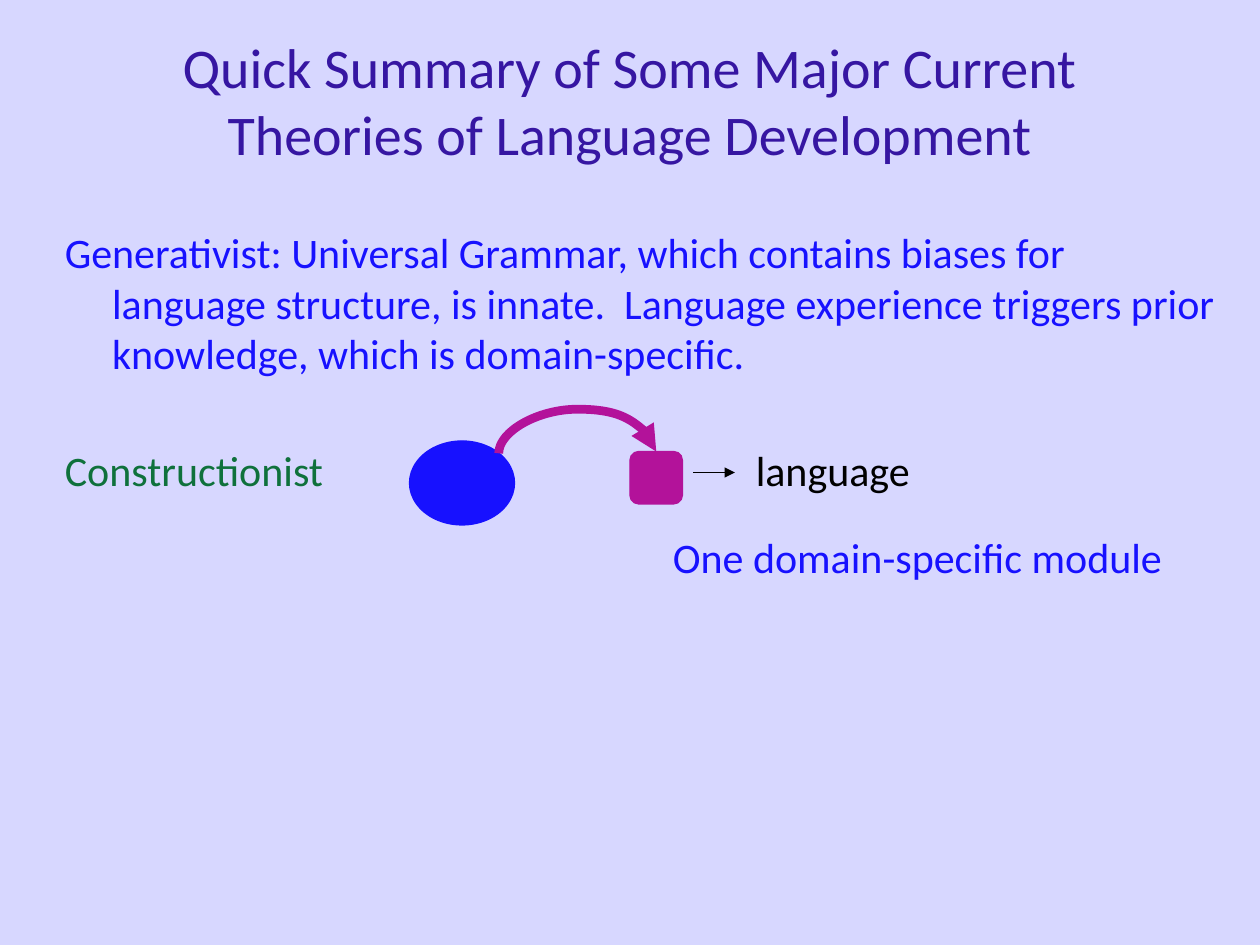
from dataclasses import dataclass

from lxml import etree
from pptx import Presentation
from pptx import util as u
from pptx.dml.color import RGBColor
from pptx.enum import shapes, text
from pptx.oxml.ns import qn


@dataclass(frozen=True)
class Theme:
    font: str = "Calibri"
    title_size: int = 32
    body_size: int = 24
    background: str = "D7D7FF"
    title: str = "3616A2"
    blue: str = "1711FF"
    green: str = "0F713C"
    magenta: str = "B3129A"
    black: str = "000000"
    thin: float = 0.75
    thick: float = 5


class Page:
    """Draws on one slide; lengths are cells of a 120 by 90 grid."""

    columns, rows = 120, 90

    def __init__(self, presentation, theme):
        self.theme = theme
        self.cell_width = presentation.slide_width / self.columns
        self.cell_height = presentation.slide_height / self.rows
        self.slide = presentation.slides.add_slide(presentation.slide_layouts[6])
        fill = self.slide.background.fill
        fill.solid()
        fill.fore_color.rgb = RGBColor.from_string(theme.background)

    def box(self, column, row, width, height):
        return (u.Emu(round(column * self.cell_width)), u.Emu(round(row * self.cell_height)),
                u.Emu(round(width * self.cell_width)), u.Emu(round(height * self.cell_height)))

    def text(self, cells, paragraphs, size=None, wrap=True, centred=False, hanging=0, gap=0):
        """Add a text box from (wording, colour) pairs, gap points apart."""
        frame = self.slide.shapes.add_textbox(*self.box(*cells)).text_frame
        frame.word_wrap = wrap
        frame.text = "\n".join(wording for wording, _ in paragraphs)
        if centred:
            frame.vertical_anchor = text.MSO_ANCHOR.MIDDLE
        for index, (paragraph, (_, color)) in enumerate(zip(frame.paragraphs, paragraphs)):
            if centred:
                paragraph.alignment = text.PP_ALIGN.CENTER
            if index:
                paragraph.space_before = u.Pt(gap)
            if hanging:
                indent = round(hanging * self.cell_width)
                properties = paragraph._p.get_or_add_pPr()
                properties.set("marL", str(indent))
                properties.set("indent", str(-indent))
            for run in paragraph.runs:
                run.font.name = self.theme.font
                run.font.size = u.Pt(size or self.theme.body_size)
                run.font.color.rgb = RGBColor.from_string(color)

    def shape(self, kind, cells, color):
        shape = self.slide.shapes.add_shape(kind, *self.box(*cells))
        shape.shadow.inherit = False
        shape.fill.solid()
        shape.fill.fore_color.rgb = RGBColor.from_string(color)
        shape.line.color.rgb = RGBColor.from_string(color)
        shape.line.width = u.Pt(self.theme.thin)

    def arrow(self, cells, color, weight, kind=shapes.MSO_CONNECTOR.STRAIGHT):
        left, top, width, height = self.box(*cells)
        connector = self.slide.shapes.add_connector(kind, left, top, left + width, top + height)
        connector.line.color.rgb = RGBColor.from_string(color)
        connector.line.width = u.Pt(weight)
        etree.SubElement(connector.line._get_or_add_ln(), qn("a:tailEnd"), type="triangle")
        etree.SubElement(connector._element.spPr, qn("a:effectLst"))
        return connector

    def arch(self, start, end, rise, color):
        """Curve up from start by rise and down to end: an S-connector turned by 270 degrees."""
        span, drop = end[0] - start[0], start[1] - end[1]
        middle, level = (start[0] + end[0]) / 2, (start[1] + end[1]) / 2
        cells = (middle - drop / 2, level - span / 2, drop, span)
        connector = self.arrow(cells, color, self.theme.thick, shapes.MSO_CONNECTOR.CURVE)
        properties = connector._element.spPr
        properties.find(qn("a:xfrm")).set("rot", str(270 * 60000))
        guides = properties.find(qn("a:prstGeom")).find(qn("a:avLst"))
        etree.SubElement(guides, qn("a:gd"), name="adj1", fmla=f"val {round(rise / drop * 100000)}")


def main():
    presentation = Presentation()
    presentation.slide_width, presentation.slide_height = u.Inches(10), u.Inches(7.5)
    theme = Theme()
    page = Page(presentation, theme)

    page.text((9, 2, 102, 15),
              [("Quick Summary of Some Major Current Theories of Language Development", theme.title)],
              size=theme.title_size, centred=True)
    page.text((5, 21, 113, 64), [
        ("Generativist: Universal Grammar, which contains biases for language structure, "
         "is innate.  Language experience triggers prior knowledge, which is domain-specific.",
         theme.blue),
        ("Constructionist", theme.green),
    ], hanging=4.5, gap=38)
    page.text((62.9, 50, 49.4, 6), [("One domain-specific module", theme.blue)], wrap=False)

    page.shape(shapes.MSO_SHAPE.OVAL, (39, 42, 10, 8), theme.blue)
    page.arch((47.5, 43.17), (62.5, 43), 4.2, theme.magenta)
    page.shape(shapes.MSO_SHAPE.ROUNDED_RECTANGLE, (60, 43, 5, 5), theme.magenta)
    page.arrow((66, 45, 4, 0), theme.black, theme.thin)
    page.text((70.8, 41.7, 17.3, 6), [("language", theme.black)], wrap=False)

    presentation.save("out.pptx")


if __name__ == "__main__":
    main()
